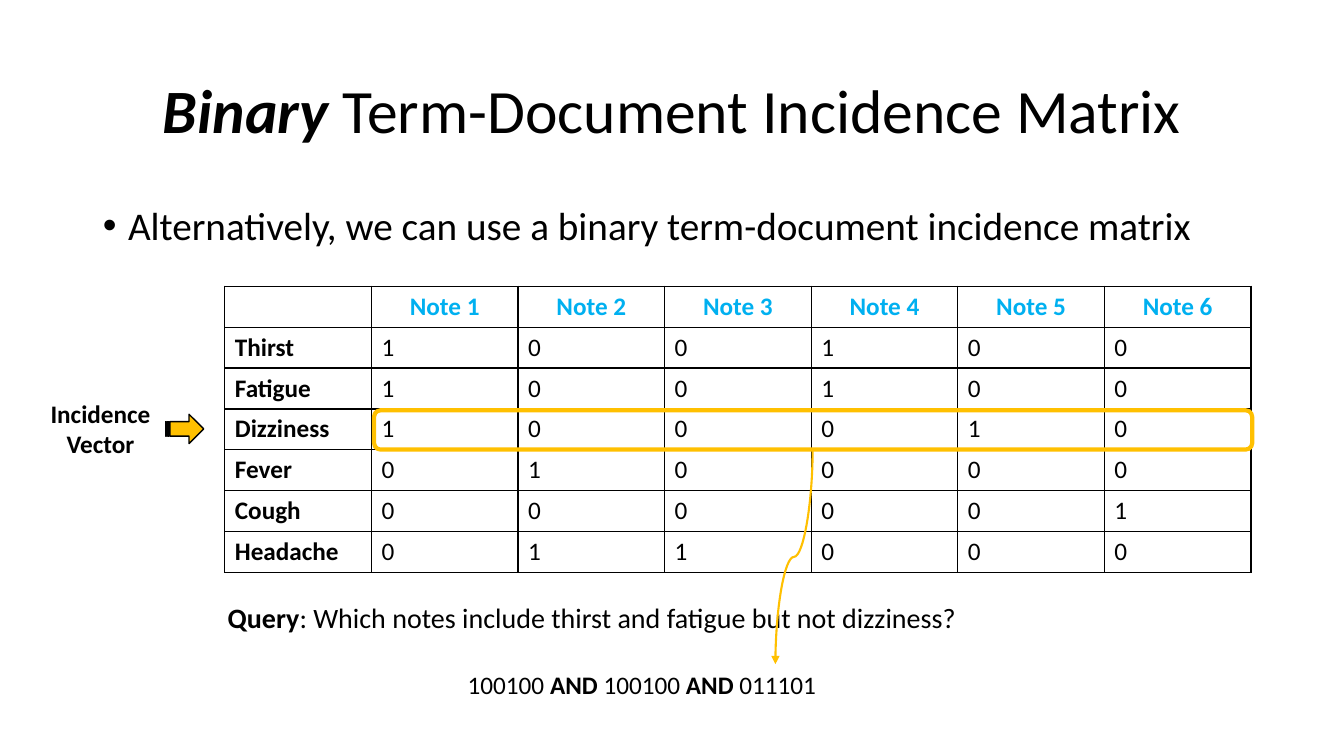
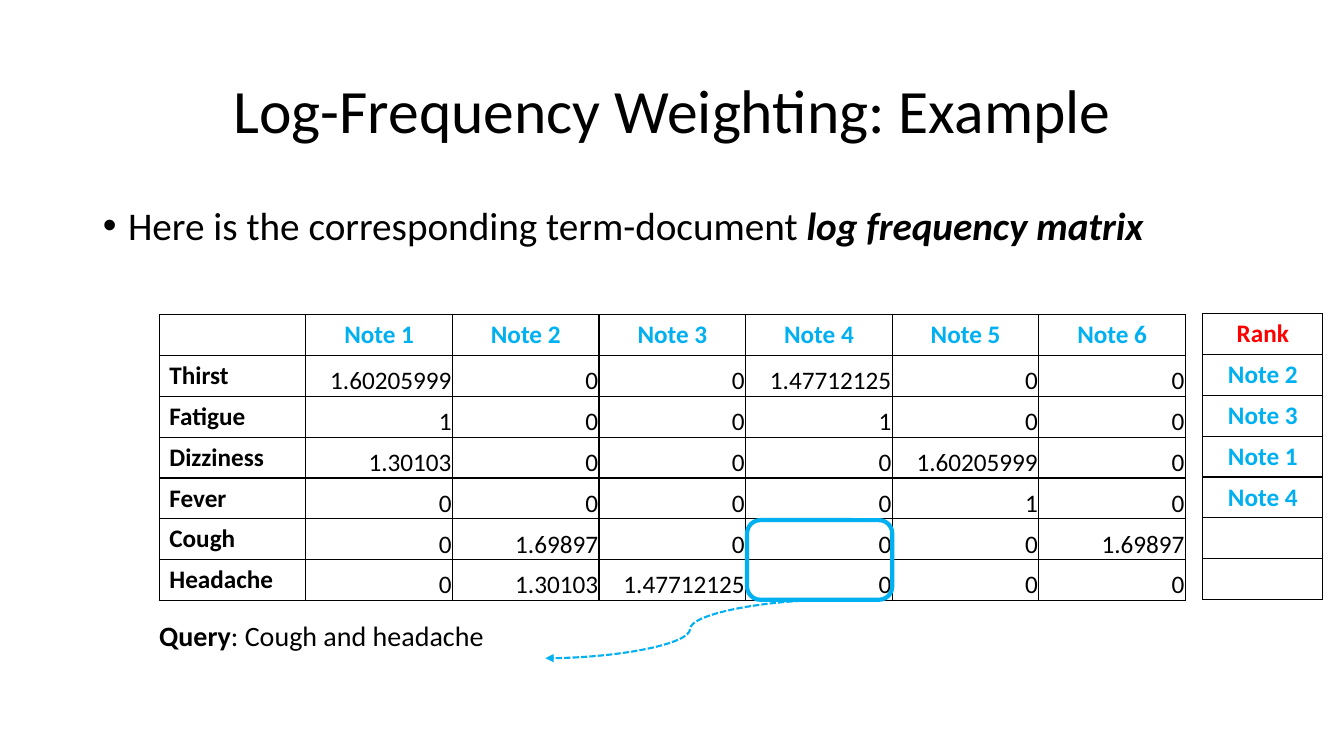
from dataclasses import dataclass
from typing import Callable, NamedTuple, Optional

from lxml import etree
from pptx import Presentation
from pptx.dml.color import RGBColor
from pptx.enum import dml, shapes, text
from pptx.oxml import ns
from pptx.util import Inches, Pt

FONT = "Calibri"
BLACK = RGBColor(0x00, 0x00, 0x00)
BLUE = RGBColor(0x00, 0xB0, 0xF0)
GOLD = RGBColor(0xFF, 0xC0, 0x00)
RED = RGBColor(0xFF, 0x00, 0x00)
NOTES = [f"Note {number}" for number in range(1, 7)]
TABLE_WIDTH, TABLE_HEIGHT = 10.18, 2.84


class Area(NamedTuple):
    left: float
    top: float
    width: float
    height: float

    def lengths(self) -> list:
        return [Inches(value) for value in self]


class Point(NamedTuple):
    x: float
    y: float


class Span(NamedTuple):
    text: str
    bold: bool = False
    italic: bool = False


@dataclass(frozen=True)
class CellStyle:
    color: RGBColor = BLACK
    bold: bool = False
    align: text.PP_ALIGN = text.PP_ALIGN.LEFT
    anchor: text.MSO_ANCHOR = text.MSO_ANCHOR.TOP
    inset: Optional[float] = None


HEADER = CellStyle(BLUE, True, text.PP_ALIGN.CENTER)
RANK_HEADER = CellStyle(RED, True, text.PP_ALIGN.CENTER)
TERM = CellStyle(bold=True)
COUNT = CellStyle()
WEIGHT = CellStyle(align=text.PP_ALIGN.RIGHT, anchor=text.MSO_ANCHOR.BOTTOM, inset=0.01)
TITLE_AREA = Area(0.92, 0.4, 11.5, 1.45)
BODY_AREA = Area(0.92, 2, 11.72, 5.1)


def format_font(font, size: float, color: RGBColor, bold: bool, italic: bool = False) -> None:
    font.name, font.size, font.bold, font.italic = FONT, Pt(size), bold, italic
    font.color.rgb = color


def write_spans(para, spans: list[Span], size: float) -> None:
    """Add one run per line of each span, with line breaks between lines."""
    for span in spans:
        for index, line in enumerate(span.text.split("\n")):
            if index:
                para.add_line_break()
            run = para.add_run()
            run.text = line
            format_font(run.font, size, BLACK, span.bold, span.italic)


def place(shape, area: Area) -> None:
    shape.left, shape.top, shape.width, shape.height = area.lengths()


def add_page(deck, title: list[Span], bullet: list[Span]):
    """Add a slide with a centred title and one bullet."""
    page = deck.slides.add_slide(deck.slide_layouts[1])
    heading, body = page.shapes.title, page.placeholders[1]
    for box, area, spans, size in ((heading, TITLE_AREA, title, 44), (body, BODY_AREA, bullet, 28)):
        place(box, area)
        box.text_frame.auto_size = text.MSO_AUTO_SIZE.NONE
        para = box.text_frame.paragraphs[0]
        para.line_spacing = 0.9
        write_spans(para, spans, size)
    heading.text_frame.vertical_anchor = text.MSO_ANCHOR.MIDDLE
    heading.text_frame.paragraphs[0].alignment = text.PP_ALIGN.CENTER

    item = body.text_frame.paragraphs[0]
    item.space_before = Pt(10)
    properties = item._p.get_or_add_pPr()
    properties.set("marL", str(Inches(0.25)))
    properties.set("indent", str(-Inches(0.25)))
    etree.SubElement(properties, ns.qn("a:buFont")).set("typeface", "Arial")
    etree.SubElement(properties, ns.qn("a:buChar")).set("char", "•")
    return page


def add_label(page, area: Area, spans: list[Span], size: float,
              align: text.PP_ALIGN = text.PP_ALIGN.LEFT) -> None:
    frame = page.shapes.add_textbox(*area.lengths()).text_frame
    frame.word_wrap = False
    frame.auto_size = text.MSO_AUTO_SIZE.SHAPE_TO_FIT_TEXT
    frame.paragraphs[0].alignment = align
    write_spans(frame.paragraphs[0], spans, size)


def set_borders(cell) -> None:
    """Give a cell thin black lines on all sides, ahead of its fill."""
    properties = cell._tc.get_or_add_tcPr()
    for position, side in enumerate(("lnL", "lnR", "lnT", "lnB")):
        line = etree.Element(ns.qn(f"a:{side}"), w=str(Pt(1)))
        fill = etree.SubElement(line, ns.qn("a:solidFill"))
        etree.SubElement(fill, ns.qn("a:srgbClr")).set("val", str(BLACK))
        properties.insert(position, line)


def fill_cell(cell, value: str, style: CellStyle) -> None:
    cell.fill.background()
    set_borders(cell)
    cell.vertical_anchor = style.anchor
    if style.inset is not None:
        cell.margin_left = cell.margin_right = cell.margin_top = Inches(style.inset)
        cell.margin_bottom = 0
    para = cell.text_frame.paragraphs[0]
    para.text = value
    para.alignment = style.align
    format_font(para.font, 18, style.color, style.bold)
    for run in para.runs:
        format_font(run.font, 18, style.color, style.bold)


def add_grid(page, area: Area, rows: list[list[str]],
             style_at: Callable[[int, int], CellStyle]) -> None:
    """Draw rows as a bordered table, with the style chosen by row and column."""
    table = page.shapes.add_table(len(rows), len(rows[0]), *area.lengths()).table
    table.first_row = table.horz_banding = False
    for row_index, row in enumerate(rows):
        for column_index, value in enumerate(row):
            fill_cell(table.cell(row_index, column_index), value,
                      style_at(row_index, column_index))


def add_matrix(page, left: float, top: float, values: dict[str, str], number: CellStyle) -> None:
    """Draw the term-by-note table; each term has space-separated values."""
    rows = [["", *NOTES]] + [[term, *line.split()] for term, line in values.items()]

    def style_at(row: int, column: int) -> CellStyle:
        if row == 0:
            return HEADER
        return TERM if column == 0 else number

    add_grid(page, Area(left, top, TABLE_WIDTH, TABLE_HEIGHT), rows, style_at)


def add_highlight(page, area: Area, color: RGBColor) -> None:
    frame = page.shapes.add_shape(shapes.MSO_SHAPE.ROUNDED_RECTANGLE, *area.lengths())
    frame.shadow.inherit = False
    frame.fill.background()
    frame.line.color.rgb = color
    frame.line.width = Pt(3)


def add_curve(page, start: Point, end: Point, color: RGBColor,
              vertical: bool = False, dashed: bool = False) -> None:
    """Draw a curved arrow; a vertical one leaves its start going down."""
    if vertical:
        middle = Point((start.x + end.x) / 2, (start.y + end.y) / 2)
        half_x, half_y = (end.x - start.x) / 2, (end.y - start.y) / 2
        start = Point(middle.x - half_y, middle.y + half_x)
        end = Point(middle.x + half_y, middle.y - half_x)
    curve = page.shapes.add_connector(
        shapes.MSO_CONNECTOR.CURVE, *(Inches(value) for value in (*start, *end)))
    curve.line.color.rgb = color
    curve.line.width = Pt(1.5)
    if dashed:
        curve.line.dash_style = dml.MSO_LINE.SQUARE_DOT
    properties = curve._element.spPr
    if vertical:
        properties.find(ns.qn("a:xfrm")).set("rot", str(90 * 60000))
    etree.SubElement(properties.find(ns.qn("a:ln")), ns.qn("a:tailEnd")).set("type", "triangle")
    etree.SubElement(properties, ns.qn("a:effectLst"))


def add_binary_page(deck) -> None:
    page = add_page(
        deck,
        [Span("Binary", True, True), Span(" Term-Document Incidence Matrix")],
        [Span("Alternatively, we can use a binary term-document incidence matrix")])
    add_matrix(page, 2.23, 2.84, {
        "Thirst": "1 0 0 1 0 0",
        "Fatigue": "1 0 0 1 0 0",
        "Dizziness": "1 0 0 0 1 0",
        "Fever": "0 1 0 0 0 0",
        "Cough": "0 0 0 0 0 1",
        "Headache": "0 1 1 0 0 0",
    }, COUNT)
    add_highlight(page, Area(3.71, 4.07, 8.71, 0.39), GOLD)
    add_label(page, Area(2.16, 5.91, 7.5, 0.44), [
        Span("Query", True),
        Span(": Which notes include thirst and fatigue but not dizziness?")], 20)

    arrow = page.shapes.add_shape(shapes.MSO_SHAPE.STRIPED_RIGHT_ARROW,
                                  *Area(1.64, 4.11, 0.38, 0.29).lengths())
    arrow.shadow.inherit = False
    arrow.fill.solid()
    arrow.fill.fore_color.rgb = GOLD
    arrow.line.color.rgb = BLACK
    arrow.line.width = Pt(1)

    add_curve(page, Point(8.06, 4.46), Point(7.69, 6.59), GOLD, vertical=True)
    add_label(page, Area(4.54, 6.59, 3.81, 0.4), [
        Span("100100 "), Span("AND ", True), Span("100100 "), Span("AND ", True),
        Span("011101")], 18)
    add_label(page, Area(0.4, 3.9, 1.25, 0.71), [Span("Incidence \nVector ", True)], 18,
              text.PP_ALIGN.CENTER)


def add_log_page(deck) -> None:
    page = add_page(
        deck,
        [Span("Log-Frequency Weighting: Example")],
        [Span("Here is the corresponding term-document "),
         Span("log frequency matrix", True, True)])
    add_matrix(page, 1.58, 3.12, {
        "Thirst": "1.60205999 0 0 1.47712125 0 0",
        "Fatigue": "1 0 0 1 0 0",
        "Dizziness": "1.30103 0 0 0 1.60205999 0",
        "Fever": "0 0 0 0 1 0",
        "Cough": "0 1.69897 0 0 0 1.69897",
        "Headache": "0 1.30103 1.47712125 0 0 0",
    }, WEIGHT)
    add_highlight(page, Area(7.41, 5.16, 1.44, 0.79), BLUE)
    add_label(page, Area(1.48, 6.09, 3.45, 0.44),
              [Span("Query", True), Span(": Cough and headache")], 20)
    ranking = ["Rank", "Note 2", "Note 3", "Note 1", "Note 4", "", ""]
    add_grid(page, Area(11.93, 3.11, 1.19, TABLE_HEIGHT), [[name] for name in ranking],
             lambda row, column: HEADER if row else RANK_HEADER)
    add_curve(page, Point(8.28, 5.95), Point(5.41, 6.53), BLUE, dashed=True)


def main() -> None:
    deck = Presentation()
    deck.slide_width, deck.slide_height = Inches(13.33), Inches(7.5)
    add_binary_page(deck)
    add_log_page(deck)
    deck.save("out.pptx")


if __name__ == "__main__":
    main()
